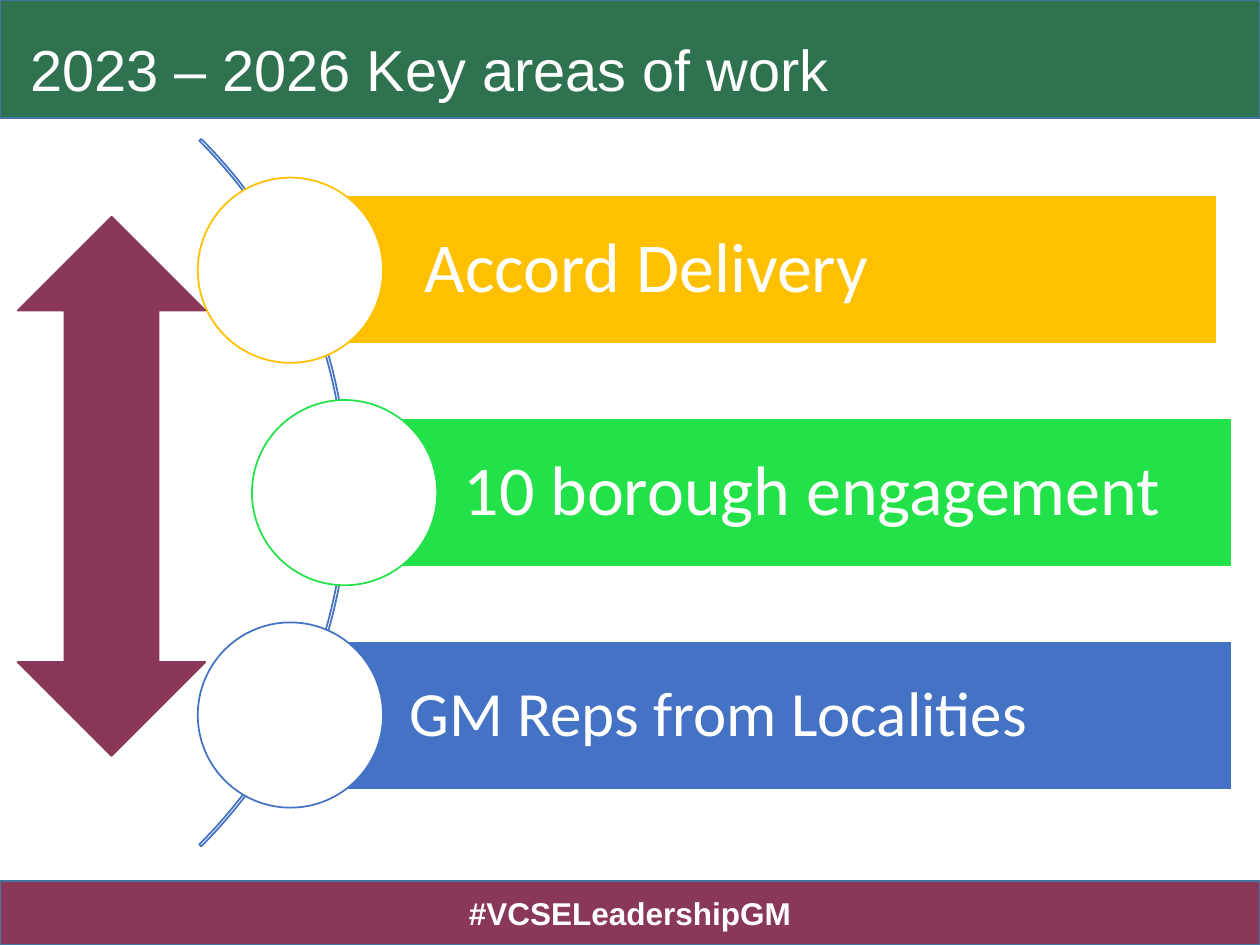
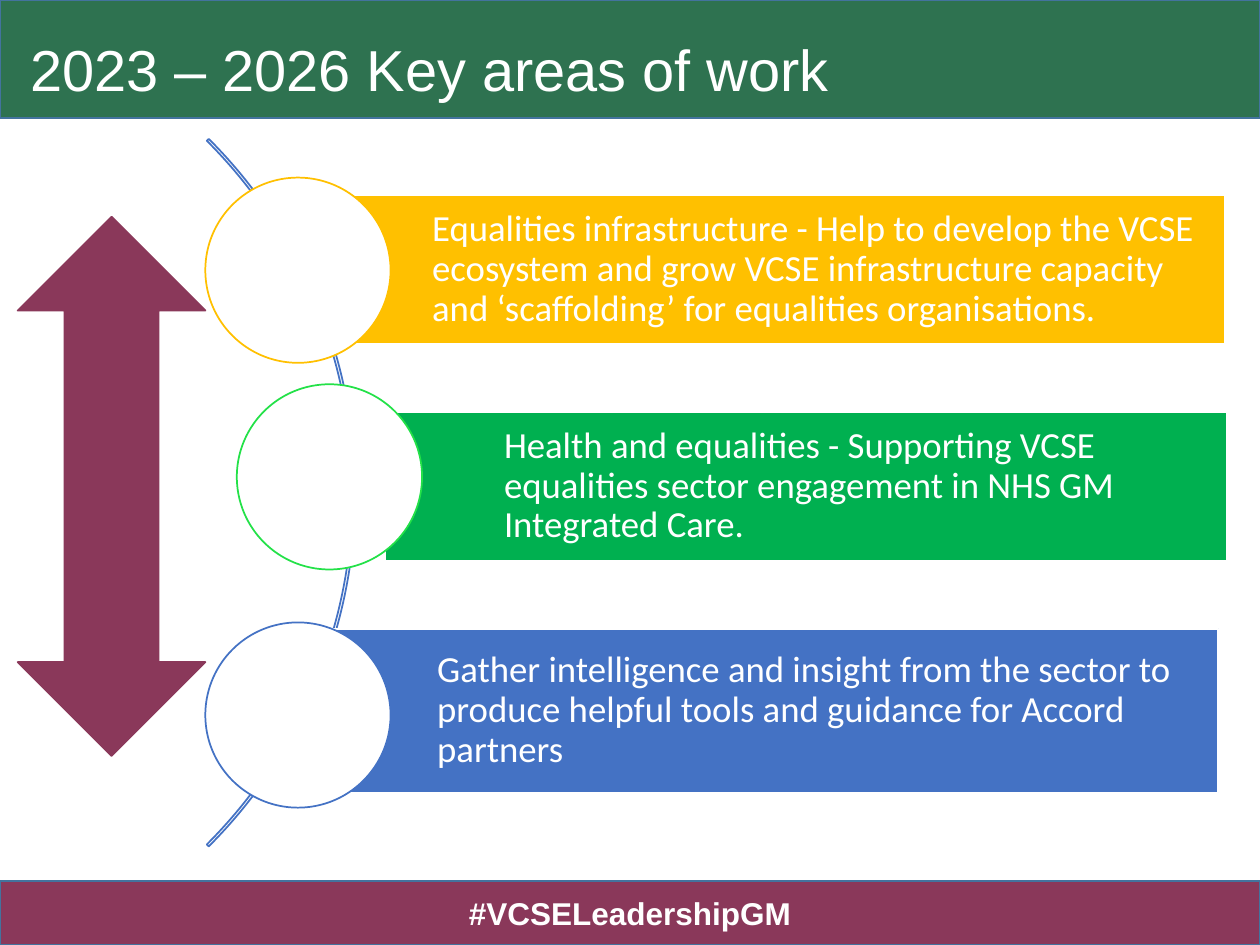
import dataclasses

import pptx
import pptx.dml.color
import pptx.enum.shapes
import pptx.enum.text
import pptx.util

COLUMNS, ROWS = 100, 75
CELL = pptx.util.Inches(0.1)
SHAPE = pptx.enum.shapes.MSO_SHAPE
ALIGN = pptx.enum.text.PP_ALIGN


@dataclasses.dataclass(frozen=True)
class Theme:
    """Colours, fonts and type sizes of the deck."""
    white: str = "FFFFFF"
    green: str = "2E7250"
    plum: str = "8A385A"
    edge: str = "43739E"
    amber: str = "FFC000"
    lime: str = "23E148"
    leaf: str = "00B050"
    blue: str = "4472C4"
    heading_font: str = "Arial"
    body_font: str = "Calibri"
    title_size: int = 33
    footer_size: int = 18
    large_size: int = 40
    medium_size: int = 36
    small_size: int = 21


@dataclasses.dataclass(frozen=True)
class Area:
    """One area of work: a labelled bar with a disc at its left end."""
    label: str
    size: int
    bar: tuple
    fill: str
    disc: tuple
    ring: str
    inset: float


THEME = Theme()
TITLE = "2023 – 2026 Key areas of work"
HASHTAG = "#VCSELeadershipGM"
DISC_SIDE = 14.7
ARC_SIDE = 79.4
DISC_TOP, DISC_STEP = 14.1, 17.65
MIDDLE_TOP, LOWER_TOP = DISC_TOP + DISC_STEP, DISC_TOP + 2 * DISC_STEP

OVERVIEW = (-51.8, [
    Area("Accord Delivery", THEME.large_size, (24.3, 15.5, 72.3, 11.8),
         THEME.amber, (15.7, DISC_TOP), THEME.amber, 1.1),
    Area("10 borough engagement", THEME.large_size, (27.4, 33.2, 70.4, 11.8),
         THEME.lime, (20, MIDDLE_TOP), THEME.lime, 1.1),
    Area("GM Reps from Localities", THEME.medium_size, (23.1, 50.9, 74.7, 11.8),
         THEME.blue, (15.7, LOWER_TOP), THEME.blue, 1),
])
EQUALITIES = (-51.2, [
    Area("Equalities infrastructure - Help to develop the VCSE ecosystem and grow "
         "VCSE infrastructure capacity and ‘scaffolding’ for equalities organisations.",
         THEME.small_size, (24.9, 15.5, 72.3, 11.8),
         THEME.amber, (16.3, DISC_TOP), THEME.amber, 0.6),
    Area("Health and equalities - Supporting VCSE equalities sector engagement "
         "in NHS GM Integrated Care.",
         THEME.small_size, (30.6, 32.7, 66.8, 11.8),
         THEME.leaf, (18.8, 30.5), THEME.lime, 0.6),
    Area("Gather intelligence and insight from the sector to produce helpful tools "
         "and guidance for Accord partners",
         THEME.small_size, (25.3, 49.9, 71.4, 13),
         THEME.blue, (16.3, LOWER_TOP), THEME.blue, 0.6),
])


def cells(*counts):
    """Turn counts of grid cells into lengths."""
    return [round(count * CELL) for count in counts]


def rgb(value):
    """Turn a hex string into a colour."""
    return pptx.dml.color.RGBColor.from_string(value)


def add_figure(page, kind, place, fill, line):
    """Draw a preset shape on the grid, with no fill if fill is None."""
    figure = page.shapes.add_shape(kind, *cells(*place))
    figure.shadow.inherit = False
    if fill is None:
        figure.fill.background()
    else:
        figure.fill.solid()
        figure.fill.fore_color.rgb = rgb(fill)
    figure.line.color.rgb = rgb(line)
    figure.line.width = pptx.util.Pt(1)
    return figure


def write(box, text, font, size, bold=False, align=ALIGN.LEFT, spacing=0.9, insets=None):
    """Write one white paragraph, vertically centred, in a box."""
    frame = box.text_frame
    frame.word_wrap = True
    frame.vertical_anchor = pptx.enum.text.MSO_ANCHOR.MIDDLE
    for side, inset in (insets or {}).items():
        setattr(frame, f"margin_{side}", *cells(inset))
    para = frame.paragraphs[0]
    for name, value in {"alignment": align, "line_spacing": spacing}.items():
        setattr(para, name, value)
    span = para.add_run()
    span.text = text
    for name, value in {"name": font, "size": pptx.util.Pt(size), "bold": bold}.items():
        setattr(span.font, name, value)
    span.font.color.rgb = rgb(THEME.white)


def add_frame(page):
    """Add the title band, the title and the footer band."""
    add_figure(page, SHAPE.RECTANGLE, (0, 0, COLUMNS, 9.4), THEME.green, THEME.edge)
    footer = add_figure(page, SHAPE.RECTANGLE, (0, 69.9, COLUMNS, 5.1), THEME.plum, THEME.edge)
    write(footer, HASHTAG, THEME.heading_font, THEME.footer_size,
          bold=True, align=ALIGN.CENTER, spacing=1.0)
    title = page.shapes.add_textbox(*cells(1.4, 0, 89.2, 11.6))
    write(title, TITLE, THEME.heading_font, THEME.title_size)


def add_arc(page, left):
    """Draw the thin arc that strings the discs together."""
    arc = add_figure(page, SHAPE.BLOCK_ARC, (left, -0.6, ARC_SIDE, ARC_SIDE), None, THEME.blue)
    for index, value in enumerate((189, 27, 0.0027)):
        arc.adjustments[index] = value


def add_area(page, area):
    """Draw the bar, label and disc of one area of work."""
    bar = add_figure(page, SHAPE.RECTANGLE, area.bar, area.fill, THEME.white)
    insets = {"left": 9.4, **dict.fromkeys(("top", "right", "bottom"), area.inset)}
    write(bar, area.label, THEME.body_font, area.size, insets=insets)
    add_figure(page, SHAPE.OVAL, (*area.disc, DISC_SIDE, DISC_SIDE), THEME.white, area.ring)


def add_page(deck, arc_left, areas):
    """Build one slide of areas of work."""
    page = deck.slides.add_slide(deck.slide_layouts[6])
    add_frame(page)
    add_arc(page, arc_left)
    for area in areas:
        add_area(page, area)
    add_figure(page, SHAPE.UP_DOWN_ARROW, (1.4, 17.2, 14.9, 42.8), THEME.plum, THEME.plum)


def main():
    """Build and save the deck."""
    deck = pptx.Presentation()
    deck.slide_width, deck.slide_height = cells(COLUMNS, ROWS)
    for arc_left, areas in (OVERVIEW, EQUALITIES):
        add_page(deck, arc_left, areas)
    deck.save("out.pptx")


if __name__ == "__main__":
    main()
